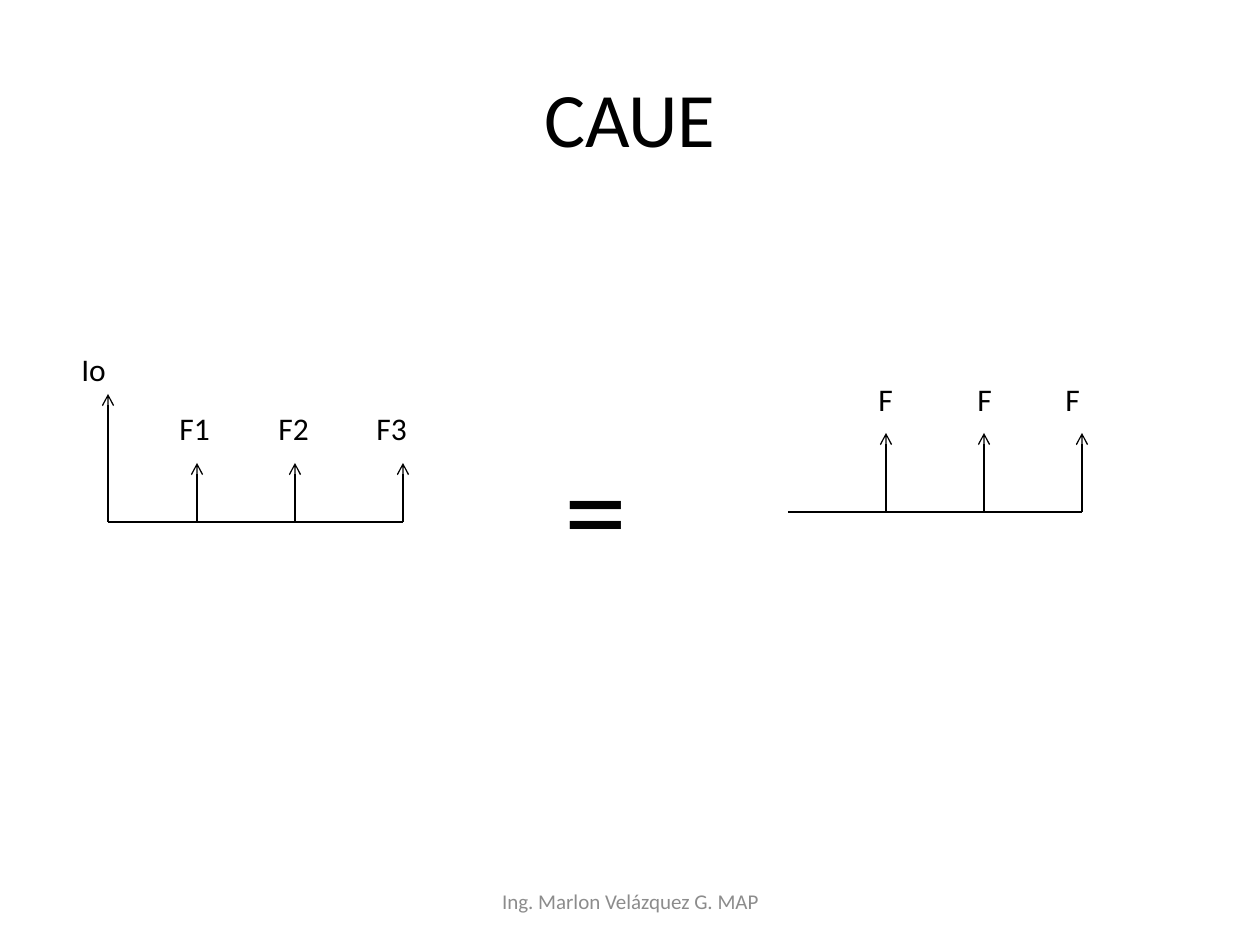
from lxml import etree
from pptx import Presentation
from pptx.dml.color import RGBColor
from pptx.enum.shapes import MSO_CONNECTOR
from pptx.enum.text import MSO_ANCHOR, PP_ALIGN
from pptx.oxml.ns import qn
from pptx.util import Pt

STRAIGHT = MSO_CONNECTOR.STRAIGHT
TOP, MIDDLE = MSO_ANCHOR.TOP, MSO_ANCHOR.MIDDLE
LEFT, CENTER = PP_ALIGN.LEFT, PP_ALIGN.CENTER
EMU_PER_PX = 914400 / 126
COLORS = {"ink": "000000", "footer": "8C8C8C"}


def px(length):
    return round(length * EMU_PER_PX)


class CashFlowSlide:
    """Draws cash flow diagrams and text in one style on a slide."""

    font = "Calibri"
    line_width = 0.75

    def __init__(self, slide):
        self.slide = slide

    def text(self, wording, left, top, width, height, size=18,
             color="ink", align=LEFT, anchor=TOP, wrap=True):
        shape = self.slide.shapes.add_textbox(*map(px, (left, top, width, height)))
        frame = shape.text_frame
        frame.word_wrap = wrap
        frame.vertical_anchor = anchor
        paragraph = frame.paragraphs[0]
        paragraph.text = wording
        paragraph.alignment = align
        paragraph.font.name = self.font
        paragraph.font.size = Pt(size)
        paragraph.font.color.rgb = RGBColor.from_string(COLORS[color])

    def line(self, x1, y1, x2, y2):
        connector = self.slide.shapes.add_connector(STRAIGHT, *map(px, (x1, y1, x2, y2)))
        connector.line.width = Pt(self.line_width)
        connector.line.color.rgb = RGBColor.from_string(COLORS["ink"])
        etree.SubElement(connector._element.spPr, qn("a:effectLst"))
        return connector

    def arrow(self, x, base, tip):
        connector = self.line(x, base, x, tip)
        etree.SubElement(connector.line._get_or_add_ln(), qn("a:tailEnd"), type="arrow")

    def diagram(self, start, end, base, tip, flows, label_top):
        self.line(start, base, end, base)
        for wording, x, label_left in flows:
            self.arrow(x, base, tip)
            self.text(wording, label_left, label_top, 88, 50)


def main():
    presentation = Presentation()
    presentation.slide_width, presentation.slide_height = px(1260), px(945)
    slide = CashFlowSlide(presentation.slides.add_slide(presentation.slide_layouts[6]))

    slide.text("CAUE", 63, 38, 1134, 158, size=44, align=CENTER, anchor=MIDDLE)
    slide.diagram(108, 403, 522, 463,
                  [("F1", 197, 167), ("F2", 295, 266), ("F3", 403, 364)], 403)
    slide.arrow(108, 522, 394)
    slide.text("Io", 69, 344, 60, 50, wrap=False)
    slide.text("=", 552, 423, 197, 165, size=72)
    slide.diagram(788, 1082, 512, 433,
                  [("F", 886, 866), ("F", 984, 965), ("F", 1082, 1053)], 374)
    slide.text("Ing. Marlon Velázquez G. MAP", 431, 876, 399, 50, size=12,
               color="footer", align=CENTER, anchor=MIDDLE)
    presentation.save("out.pptx")


if __name__ == "__main__":
    main()
